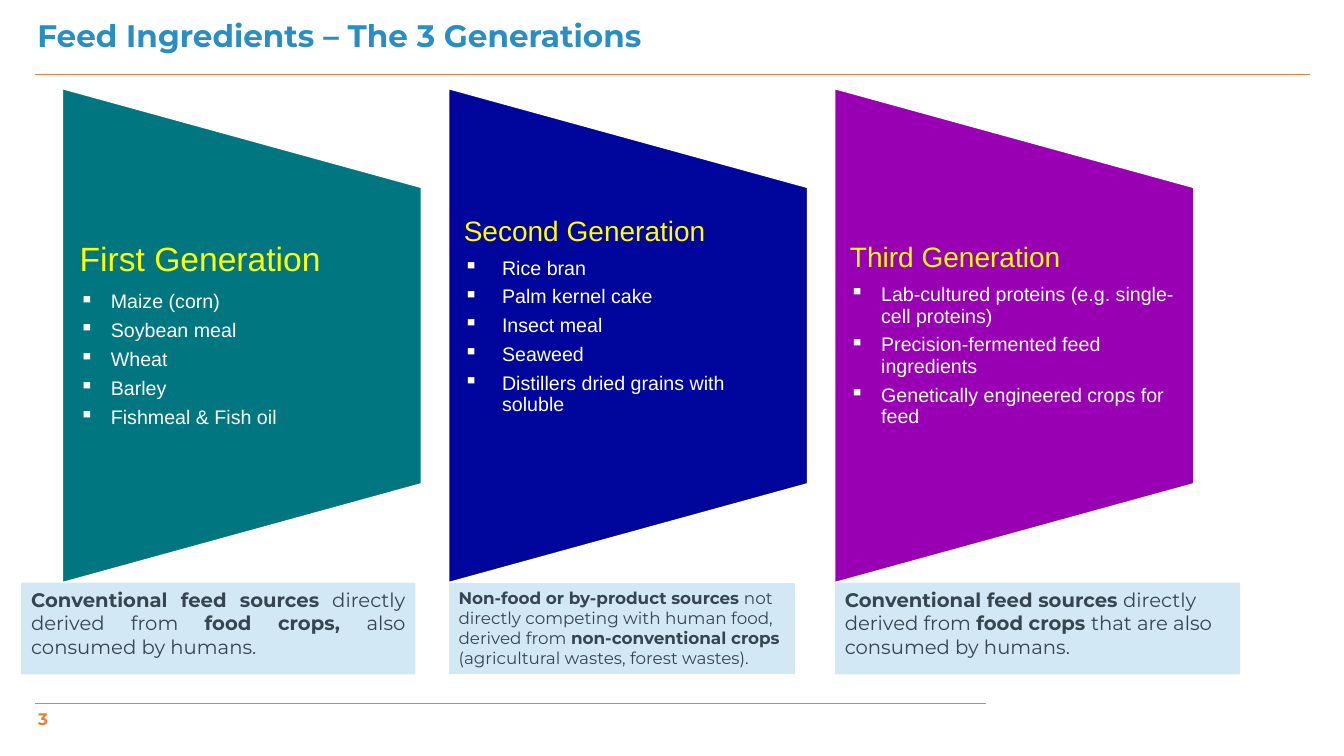
from dataclasses import dataclass

from lxml import etree
from pptx import Presentation
from pptx import util as u
from pptx.dml.color import RGBColor
from pptx.enum import shapes, text
from pptx.oxml import ns

PX = 9144  # 100 px to the inch


@dataclass(frozen=True)
class Theme:
    heading_font: str = "Montserrat"
    panel_font: str = "Arial"
    title: str = "298FC2"
    accent: str = "ED7D31"
    footer_rule: str = "999999"
    caption_fill: str = "D2E9F5"
    caption_text: str = "36454F"
    panel_heading: str = "FFFF00"
    white: str = "FFFFFF"
    title_size: float = 22.2
    item_size: int = 14
    number_size: int = 12


THEME = Theme()

# Caption runs alternate between bold and regular, bold first.
GENERATIONS = [
    dict(heading="First Generation", heading_size=24, fill="007681",
         items=["Maize (corn)", "Soybean meal", "Wheat", "Barley", "Fishmeal & Fish oil"],
         indent=31, insets=(17, 78, 17, 78),
         caption=["Conventional feed sources", " directly derived from ",
                  "food crops, ", "also consumed by humans."],
         caption_box=(21, 578, 391, 91), caption_size=14,
         align=text.PP_ALIGN.JUSTIFY, border=None),
    dict(heading="Second Generation", heading_size=20, fill="00059B",
         items=["Rice bran", "Palm kernel cake", "Insect meal", "Seaweed",
                "Distillers dried grains with soluble"],
         indent=38, insets=(15, 78, 15, 116),
         caption=["Non-food or by-product sources",
                  " not directly competing with human food, derived from ",
                  "non-conventional crops ", "(agricultural wastes, forest wastes)."],
         caption_box=(445, 578, 344, 91), caption_size=12,
         align=text.PP_ALIGN.LEFT, border=THEME.white),
    dict(heading="Third Generation", heading_size=20, fill="9900B4",
         items=["Lab-cultured proteins (e.g. single-cell proteins)",
                "Precision-fermented feed ingredients",
                "Genetically engineered crops for feed"],
         indent=31, insets=(15, 78, 15, 78),
         caption=["Conventional feed sources", " directly derived from ",
                  "food crops ", "that are also consumed by humans."],
         caption_box=(828, 578, 402, 91), caption_size=14,
         align=text.PP_ALIGN.LEFT, border=None),
]


def px(*lengths):
    return [u.Emu(length * PX) for length in lengths]


def rgb(value):
    return RGBColor.from_string(value)


def set_font(font, name, size, color, bold=False):
    font.name, font.size, font.bold = name, u.Pt(size), bold
    font.color.rgb = rgb(color)


def set_frame(frame, insets, anchor):
    frame.word_wrap = True
    frame.auto_size = text.MSO_AUTO_SIZE.NONE
    frame.vertical_anchor = anchor
    (frame.margin_left, frame.margin_top,
     frame.margin_right, frame.margin_bottom) = px(*insets)


def paint(shape, fill, border=None, width=0.75):
    shape.shadow.inherit = False
    shape.fill.solid()
    shape.fill.fore_color.rgb = rgb(fill)
    if border:
        shape.line.color.rgb = rgb(border)
        shape.line.width = u.Pt(width)
    else:
        shape.line.fill.background()


def add_rule(slide, left, right, y, color):
    rule = slide.shapes.add_connector(
        shapes.MSO_CONNECTOR.STRAIGHT, *px(left, y, right, y))
    rule.line.color.rgb = rgb(color)
    rule.line.width = u.Pt(0.75)
    etree.SubElement(rule._element.spPr, ns.qn("a:effectLst"))


def add_bullet(paragraph, indent):
    properties = paragraph._p.get_or_add_pPr()
    properties.set("marL", str(indent * PX))
    properties.set("indent", str(-indent * PX))
    etree.SubElement(properties, ns.qn("a:buChar")).set("char", "▪")


def add_title(slide, box, wording):
    title = slide.shapes.title
    title.left, title.top, title.width, title.height = px(*box)
    set_frame(title.text_frame, (0, 0, 0, 0), text.MSO_ANCHOR.TOP)
    line = title.text_frame.paragraphs[0]
    line.text = wording
    line.alignment = text.PP_ALIGN.LEFT
    line.line_spacing = 0.7
    line.space_before = u.Pt(0)
    set_font(line.font, THEME.heading_font, THEME.title_size, THEME.title, True)


def add_panel(slide, box, generation):
    """Draw a trapezoid narrowing to the right, with its heading and list."""
    left, top, width, height = box
    right, bottom, slope = left + width, top + height, height // 5
    outline = slide.shapes.build_freeform(left, bottom, scale=PX)
    outline.add_line_segments([(left, top), (right, top + slope), (right, bottom - slope)])
    panel = outline.convert_to_shape()
    paint(panel, generation["fill"], THEME.white, 1)
    frame = panel.text_frame
    set_frame(frame, generation["insets"], text.MSO_ANCHOR.MIDDLE)
    for index, wording in enumerate([generation["heading"], *generation["items"]]):
        line = frame.add_paragraph() if index else frame.paragraphs[0]
        line.text = wording
        size = THEME.item_size if index else generation["heading_size"]
        line.alignment = text.PP_ALIGN.LEFT
        line.line_spacing = 0.9
        line.space_after = u.Pt(round(0.39 * size, 1))
        if index:
            add_bullet(line, generation["indent"])
        set_font(line.font, THEME.panel_font, size,
                 THEME.white if index else THEME.panel_heading)


def add_caption(slide, box, generation):
    caption = slide.shapes.add_shape(shapes.MSO_SHAPE.RECTANGLE, *px(*box))
    paint(caption, THEME.caption_fill, generation["border"])
    set_frame(caption.text_frame, (10, 5, 10, 5), text.MSO_ANCHOR.TOP)
    line = caption.text_frame.paragraphs[0]
    line.alignment = generation["align"]
    for index, wording in enumerate(generation["caption"]):
        run = line.add_run()
        run.text = wording
        set_font(run.font, THEME.heading_font, generation["caption_size"],
                 THEME.caption_text, index % 2 == 0)


def add_page_number(slide, box, number):
    frame = slide.shapes.add_textbox(*px(*box)).text_frame
    set_frame(frame, (10, 5, 10, 5), text.MSO_ANCHOR.MIDDLE)
    line = frame.paragraphs[0]
    line.text = number
    set_font(line.font, THEME.heading_font, THEME.number_size, THEME.accent, True)


def add_generations_slide(deck):
    slide = deck.slides.add_slide(deck.slide_layouts[5])
    add_rule(slide, 35, 1299, 74, THEME.accent)
    add_rule(slide, 35, 978, 698, THEME.footer_rule)
    add_title(slide, (37, 26, 962, 41), "Feed Ingredients – The 3 Generations")
    for index, generation in enumerate(GENERATIONS):
        add_panel(slide, (62 + 383 * index, 88, 356, 490), generation)
        add_caption(slide, generation["caption_box"], generation)
    add_page_number(slide, (28, 702, 68, 23), "3")


def main():
    deck = Presentation()
    deck.slide_width, deck.slide_height = px(1333, 750)
    add_generations_slide(deck)
    deck.save("out.pptx")


if __name__ == "__main__":
    main()
